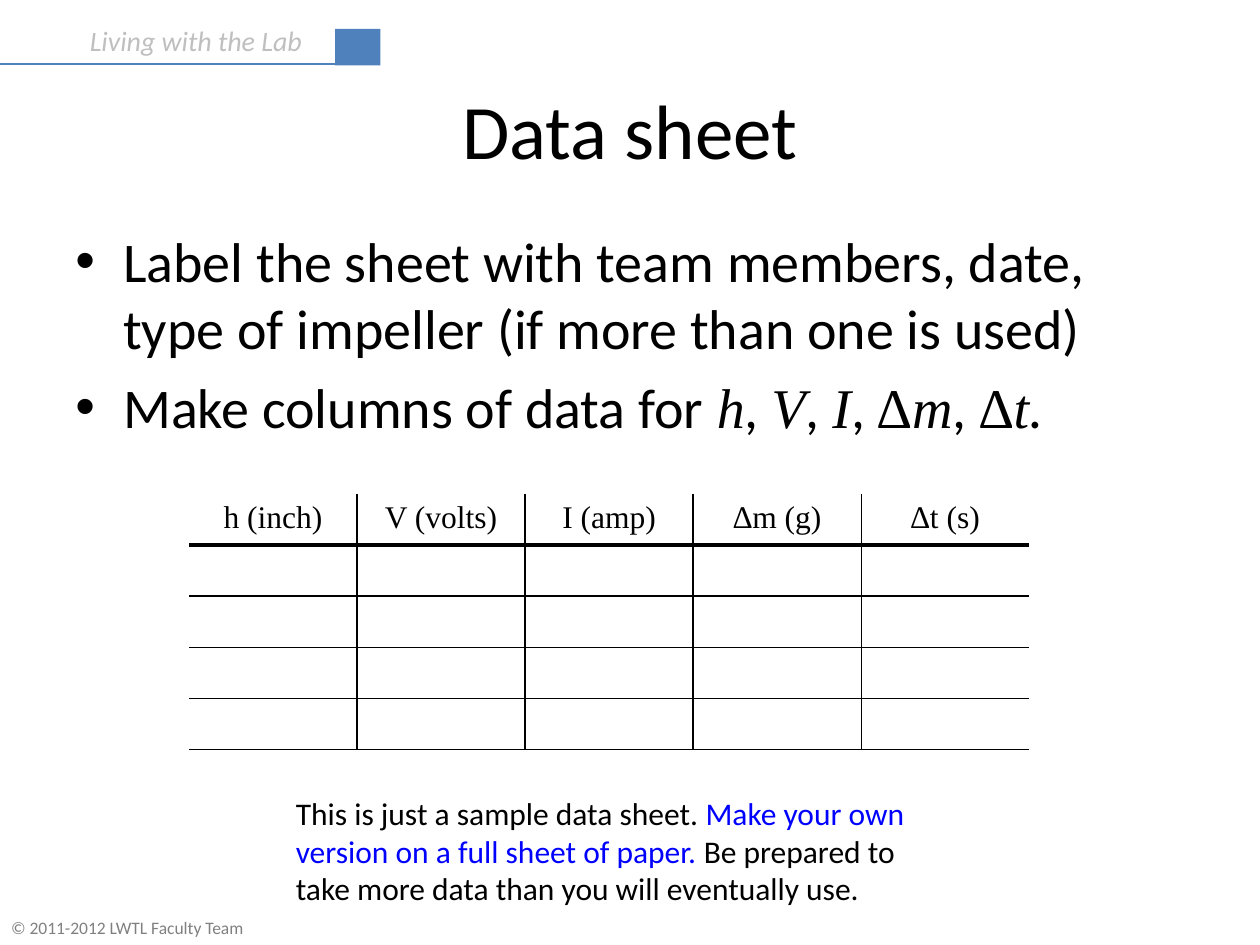
from lxml import etree
from pptx import Presentation
from pptx import util as u
from pptx.dml.color import RGBColor
from pptx.enum import shapes, text
from pptx.oxml.ns import qn

BLACK = RGBColor(0x00, 0x00, 0x00)
BLUE = RGBColor(0x00, 0x00, 0xFF)
ACCENT = RGBColor(0x4F, 0x81, 0xBD)
PALE_GRAY = RGBColor(0xBF, 0xBF, 0xBF)
GRAY = RGBColor(0x80, 0x80, 0x80)
SANS, SERIF = "Calibri", "Times New Roman"


def inches(*lengths):
    return [u.Inches(length) for length in lengths]


class SlideBuilder:
    def __init__(self, slide):
        self.slide = slide

    def style(self, run, size, color=BLACK, font=SANS, italic=False):
        run.font.size = u.Pt(size)
        run.font.color.rgb = color
        run.font.name = font
        run.font.italic = italic

    def runs(self, paragraph, pieces, size):
        """Fill a paragraph with (text, style options) pieces."""
        for words, options in pieces:
            run = paragraph.add_run()
            run.text = words
            self.style(run, size, **options)

    def text_box(self, place, paragraphs, size, align=text.PP_ALIGN.LEFT,
                 anchor=text.MSO_ANCHOR.TOP, wrap=True, bullets=False):
        frame = self.slide.shapes.add_textbox(*inches(*place)).text_frame
        frame.word_wrap = wrap
        frame.vertical_anchor = anchor
        for index, pieces in enumerate(paragraphs):
            paragraph = frame.add_paragraph() if index else frame.paragraphs[0]
            paragraph.alignment = align
            if bullets:
                self.bullet(paragraph)
            if index:
                paragraph.space_before = u.Pt(size * 0.2)
            self.runs(paragraph, pieces, size)

    def bullet(self, paragraph):
        props = paragraph._p.get_or_add_pPr()
        indent = u.Inches(0.38)
        props.set("marL", str(indent))
        props.set("indent", str(-indent))
        etree.SubElement(props, qn("a:buFont"), typeface="Arial")
        etree.SubElement(props, qn("a:buChar"), char="•")

    def block(self, place, color):
        block = self.slide.shapes.add_shape(
            shapes.MSO_SHAPE.RECTANGLE, *inches(*place))
        block.shadow.inherit = False
        block.fill.solid()
        block.fill.fore_color.rgb = color
        block.line.fill.background()

    def rule(self, ends, color, width):
        rule = self.slide.shapes.add_connector(
            shapes.MSO_CONNECTOR.STRAIGHT, *inches(*ends))
        rule.line.color.rgb = color
        rule.line.width = u.Pt(width)
        etree.SubElement(rule._element.spPr, qn("a:effectLst"))

    def border(self, cell, side, width):
        """Draw one side of a cell; a width of 0 leaves it open."""
        line = etree.SubElement(cell._tc.get_or_add_tcPr(), qn(f"a:ln{side}"),
                                w=str(u.Pt(width)))
        if width:
            fill = etree.SubElement(line, qn("a:solidFill"))
            etree.SubElement(fill, qn("a:srgbClr"), val=str(BLACK))
        else:
            etree.SubElement(line, qn("a:noFill"))

    def open_table(self, place, headings, row_count, size):
        """Table ruled inside and below, with a heavy line under the headings."""
        last = len(headings) - 1
        table = self.slide.shapes.add_table(
            row_count, len(headings), *inches(*place)).table
        table.horz_banding = False
        for row in range(row_count):
            for column, heading in enumerate(headings):
                cell = table.cell(row, column)
                top = 0 if row == 0 else 2.25 if row == 1 else 1
                self.border(cell, "L", 1 if column else 0)
                self.border(cell, "R", 1 if column < last else 0)
                self.border(cell, "T", top)
                self.border(cell, "B", 1 if row else 2.25)
                cell.fill.background()
                if row == 0:
                    paragraph = cell.text_frame.paragraphs[0]
                    paragraph.text = heading
                    paragraph.alignment = text.PP_ALIGN.CENTER
                    self.style(paragraph.runs[0], size, font=SERIF)


def main():
    deck = Presentation()
    deck.slide_width, deck.slide_height = inches(10, 7.5)
    page = SlideBuilder(deck.slides.add_slide(deck.slide_layouts[6]))
    center, middle = text.PP_ALIGN.CENTER, text.MSO_ANCHOR.MIDDLE

    page.text_box((-0.01, 7.23, 2.1, 0.27),
                  [[("© 2011-2012 LWTL Faculty Team", {"color": GRAY})]],
                  10, wrap=False)
    page.text_box((0.42, 0.1, 2.27, 0.44),
                  [[("Living with the Lab", {"color": PALE_GRAY, "italic": True})]],
                  16, center, middle)
    page.block((2.66, 0.23, 0.36, 0.29), ACCENT)
    page.rule((-0.01, 0.51, 2.99, 0.51), ACCENT, 1)
    page.text_box((0.5, 0.5, 9, 1.05), [[("Data sheet", {})]], 44, center, middle)

    upright, variable = {"font": SERIF}, {"font": SERIF, "italic": True}
    comma = (", ", {})
    delta = ("∆", upright)
    columns = [
        ("Make columns of data for ", {}),
        ("h", variable), comma, ("V", variable), comma, ("I", variable), comma,
        delta, ("m", variable), comma, delta, ("t", variable),
        (".", {"italic": True}),
    ]
    label = [("Label the sheet with team members, date, type of impeller "
              "(if more than one is used)", {})]
    page.text_box((0.5, 1.75, 9, 2.08), [label, columns], 32, bullets=True)

    page.open_table((1.5, 3.92, 6.67, 2.03),
                    ["h (inch)", "V (volts)", "I (amp)", "∆m (g)", "∆t (s)"], 5, 18)

    page.text_box((2.25, 6.25, 5.33, 1.01), [[
        ("This is just a sample data sheet. ", {}),
        ("Make your own version on a full sheet of paper.", {"color": BLUE}),
        (" Be prepared to take more data than you will eventually use.", {}),
    ]], 18)
    deck.save("out.pptx")


if __name__ == "__main__":
    main()
